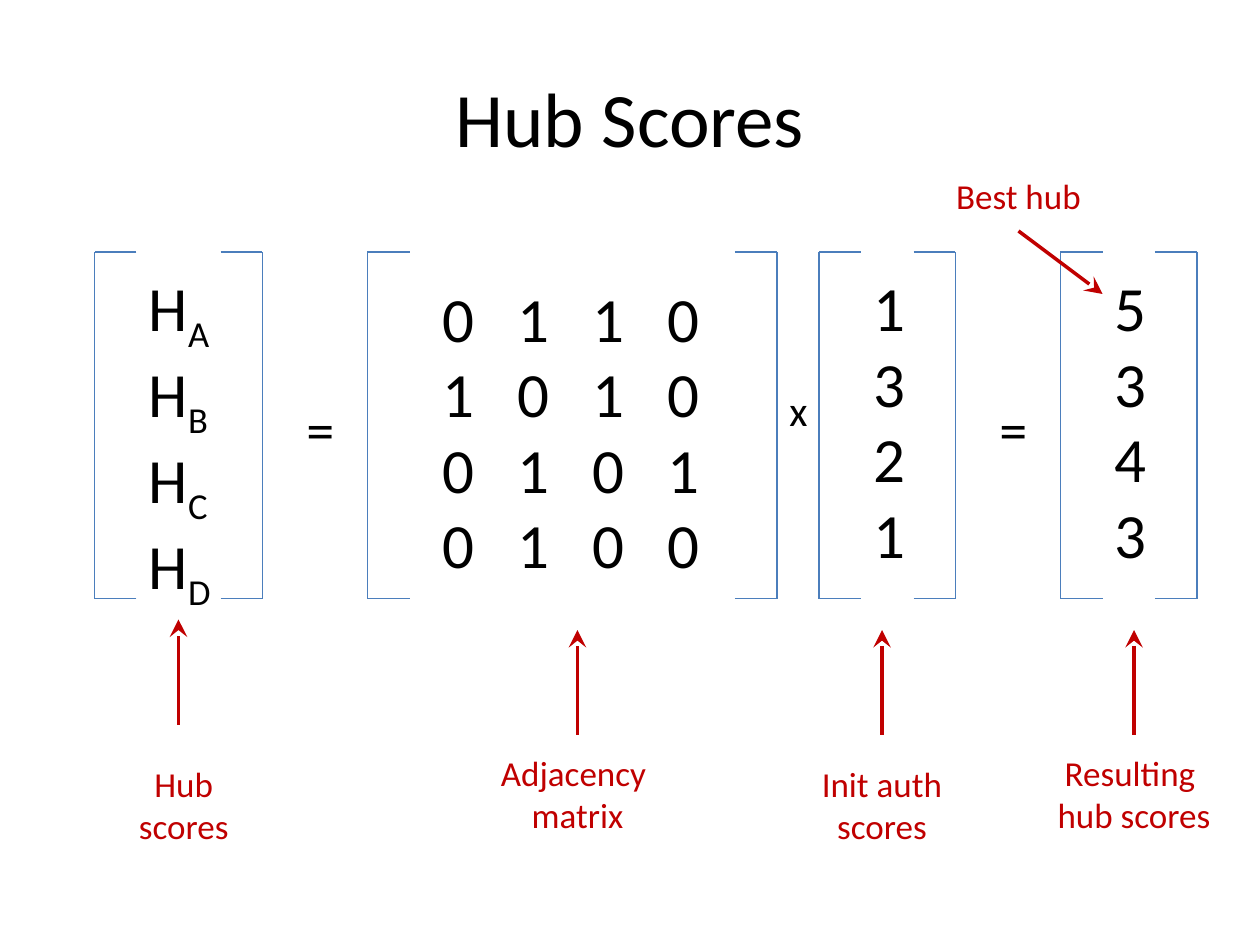
from pptx import Presentation
from pptx.dml.color import RGBColor
from pptx.enum.shapes import MSO_CONNECTOR
from pptx.enum.text import MSO_ANCHOR, MSO_AUTO_SIZE, PP_ALIGN
from pptx.oxml.ns import qn
from pptx.util import Pt
from lxml.etree import SubElement

BLACK = RGBColor(0x00, 0x00, 0x00)
RED = RGBColor(0xC0, 0x00, 0x00)
BLUE = RGBColor(0x4B, 0x7E, 0xBC)
TOP, BOTTOM, ARM = 144, 342, 24
COLUMN = 42.7


def style(tf, size, color, align):
    """Format every paragraph and run of a text frame."""
    for p in tf.paragraphs:
        p.alignment = align
        for r in p.runs:
            r.font.name = "Calibri"
            r.font.size = Pt(size)
            r.font.color.rgb = color


def add_title(s, text):
    """Place and fill the title placeholder."""
    sp = s.shapes.title
    sp.left, sp.top, sp.width, sp.height = Pt(36), Pt(21.6), Pt(648), Pt(90)
    tf = sp.text_frame
    tf.text = text
    tf.vertical_anchor = MSO_ANCHOR.MIDDLE
    style(tf, 44, BLACK, PP_ALIGN.CENTER)


def add_text(s, text, x, y, w, h, size=36, color=BLACK, align=PP_ALIGN.LEFT):
    """Add a wrapped text box and return its text frame."""
    tf = s.shapes.add_textbox(Pt(x), Pt(y), Pt(w), Pt(h)).text_frame
    tf.word_wrap = True
    tf.auto_size = MSO_AUTO_SIZE.SHAPE_TO_FIT_TEXT
    tf.text = text
    style(tf, size, color, align)
    return tf


def add_label(s, text, x, y, w, h=55.4):
    """Add a centred red caption."""
    add_text(s, text, x, y, w, h, 20, RED, PP_ALIGN.CENTER)


def add_hub_names(s, names, x, y, w, h):
    """Add a column of H symbols with subscripts."""
    tf = add_text(s, "\n".join("H" for _ in names), x, y, w, h)
    for p, name in zip(tf.paragraphs, names):
        r = p.add_run()
        r.text = name
        r._r.get_or_add_rPr().set("baseline", "-25000")
    style(tf, 36, BLACK, PP_ALIGN.LEFT)


def add_matrix(s, rows, x, y, w, h):
    """Add rows of digits aligned on tab stops."""
    tf = add_text(s, "\n".join("\t".join(row) for row in rows), x, y, w, h)
    for p in tf.paragraphs:
        tabs = SubElement(p._p.get_or_add_pPr(), qn("a:tabLst"))
        for i in range(1, len(rows[0])):
            SubElement(tabs, qn("a:tab"), pos=str(Pt(COLUMN * i)), algn="l")


def add_line(shapes, x1, y1, x2, y2, color, width):
    """Add a straight line without shadow and return it."""
    c = shapes.add_connector(MSO_CONNECTOR.STRAIGHT, Pt(x1), Pt(y1), Pt(x2), Pt(y2))
    c.line.color.rgb = color
    c.line.width = Pt(width)
    SubElement(c._element.spPr, qn("a:effectLst"))
    return c


def add_bracket(s, x, arm):
    """Add a square bracket whose arms reach sideways from x."""
    shapes = s.shapes.add_group_shape().shapes
    for y in (TOP, BOTTOM):
        add_line(shapes, x + arm, y, x, y, BLUE, 0.75)
    add_line(shapes, x, BOTTOM, x, TOP, BLUE, 0.75)


def add_arrow(s, x1, y1, x2, y2):
    """Add a red arrow with a stealth head."""
    ln = add_line(s.shapes, x1, y1, x2, y2, RED, 2).line._get_or_add_ln()
    SubElement(ln, qn("a:tailEnd"), type="stealth", w="lg", len="lg")


def main():
    """Build the hub scores slide."""
    prs = Presentation()
    prs.slide_width, prs.slide_height = Pt(720), Pt(540)
    s = prs.slides.add_slide(prs.slide_layouts[5])
    add_title(s, "Hub Scores")

    for left, right in ((54, 150), (210, 444), (468, 546), (606, 684)):
        add_bracket(s, left, ARM)
        add_bracket(s, right, -ARM)

    add_hub_names(s, "ABCD", 78, 150, 96, 211)
    add_matrix(s, ("0110", "1010", "0101", "0100"), 246, 156, 198, 181.4)
    for digits, x in (("1321", 492), ("5343", 630)):
        add_text(s, "\n".join(digits), x, 150, 66, 211)
    for x in (168, 564):
        add_text(s, "=", x, 222, 48, 46, 32)
    add_text(s, "x", 444, 216, 24, 36, 24)

    for x, y in ((102, 354), (330, 360), (504, 360), (648, 360)):
        add_arrow(s, x, y + 60, x, y)
    add_arrow(s, 582, 132, 630, 168)

    add_label(s, "Hub\vscores", 24, 432, 162)
    add_label(s, "Adjacency \vmatrix", 234, 426, 192)
    add_label(s, "Init auth\vscores", 432, 432, 144)
    add_label(s, "Resulting \nhub scores", 576, 426, 144)
    add_label(s, "Best hub", 510, 96, 144, 31.7)
    prs.save("out.pptx")


if __name__ == "__main__":
    main()
